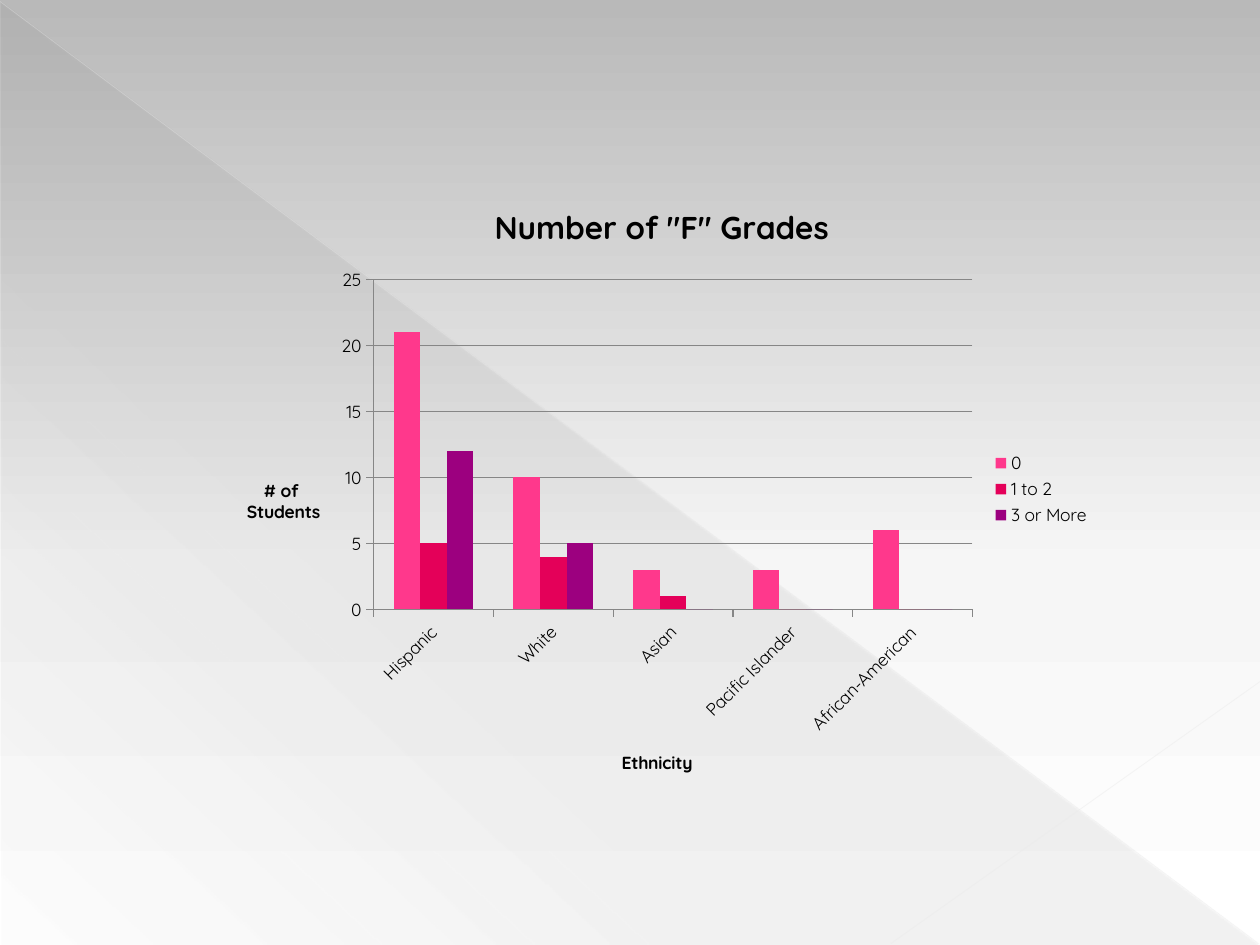
from lxml import etree
from pptx import Presentation
from pptx import util as u
from pptx.chart import data as cd
from pptx.dml.color import RGBColor
from pptx.enum import chart as ch, shapes
from pptx.oxml.ns import qn

BLACK = RGBColor(0, 0, 0)
GREY = RGBColor(0x86, 0x86, 0x86)
MIST = RGBColor(0xE8, 0xE8, 0xE8)
PALE = RGBColor(0xEA, 0xEA, 0xEA)
DUSK = RGBColor(0x66, 0x66, 0x66)
SILVER = RGBColor(0xB9, 0xB9, 0xB9)
SNOW = RGBColor(0xF6, 0xF6, 0xF6)
WHITE = RGBColor(0xFF, 0xFF, 0xFF)
PINK = RGBColor(0xFF, 0x38, 0x8C)
ROSE = RGBColor(0xE4, 0x00, 0x59)
PLUM = RGBColor(0x9C, 0x00, 0x7F)
FACE = "Quicksand"


def shade(fill, root, stops, angle):
    fill.gradient()
    grad = next(root.iter(qn("a:gradFill")))
    grad.find(qn("a:lin")).set("ang", str(angle * 60000))
    group = grad.find(qn("a:gsLst"))
    group.clear()
    for place, tint, alpha in stops:
        stop = etree.SubElement(group, qn("a:gs"), pos=str(place * 1000))
        color = etree.SubElement(stop, qn("a:srgbClr"), val=str(tint))
        etree.SubElement(color, qn("a:alpha"), val=str(alpha * 1000))


def label(frame, lines, size):
    frame.text = "\n".join(lines)
    for para in frame.paragraphs:
        para.font.name = FACE
        para.font.size = u.Pt(size)
        para.font.bold = True
        para.font.color.rgb = BLACK


deck = Presentation()
deck.slide_width, deck.slide_height = u.Cm(25.4), u.Cm(19.05)
slide = deck.slides.add_slide(deck.slide_layouts[6])
shade(slide.background.fill, slide.element,
      [(0, SILVER, 100), (60, SNOW, 100), (100, WHITE, 100)], 90)

wedge = slide.shapes.add_shape(shapes.MSO_SHAPE.RIGHT_TRIANGLE,
                               u.Cm(0.03), u.Cm(0.05), u.Cm(25.35), u.Cm(19))
wedge.shadow.inherit = False
wedge.line.fill.background()
shade(wedge.fill, wedge.element,
      [(0, DUSK, 10), (70, DUSK, 8), (100, DUSK, 1)], 133)

for ends, tint, width, alpha in [
    ((0, 0.03, 25.37, 19.02), MIST, 0.39, 35),
    ((25.4, 13.74, 17.96, 19.02), PALE, 0.47, 45),
]:
    edge = slide.shapes.add_connector(shapes.MSO_CONNECTOR.STRAIGHT, *map(u.Cm, ends))
    edge.line.color.rgb = tint
    edge.line.width = u.Pt(width)
    color = next(edge.element.iter(qn("a:srgbClr")))
    etree.SubElement(color, qn("a:alpha"), val=str(alpha * 1000))
    etree.SubElement(edge.element.spPr, qn("a:effectLst"))

data = cd.CategoryChartData()
data.categories = ["Hispanic", "White", "Asian", "Pacific Islander", "African-American"]
data.add_series("0", [21, 10, 3, 3, 6])
data.add_series("1 to 2", [5, 4, 1, 0, 0])
data.add_series("3 or More", [12, 5, 0, 0, 0])
chart = slide.shapes.add_chart(ch.XL_CHART_TYPE.COLUMN_CLUSTERED, u.Cm(4.45), u.Cm(3.61),
                               u.Cm(17.78), u.Cm(12.5), data).chart
chart.font.name = FACE
chart.font.size = u.Pt(10)
chart.font.color.rgb = BLACK
chart.has_title = True
label(chart.chart_title.text_frame, ['Number of "F" Grades'], 18)
chart.chart_title.include_in_layout = False
chart.has_legend = True
chart.legend.position = ch.XL_LEGEND_POSITION.RIGHT
chart.legend.include_in_layout = False

plot = chart.plots[0]
plot.gap_width = 150
plot.overlap = 0
plot.vary_by_categories = False
for series, tint in zip(plot.series, [PINK, ROSE, PLUM]):
    series.format.fill.solid()
    series.format.fill.fore_color.rgb = tint

base, rise = chart.category_axis, chart.value_axis
for axis, lines in [(base, ["Ethnicity"]), (rise, ["# of ", "Students"])]:
    axis.major_tick_mark = ch.XL_TICK_MARK.OUTSIDE
    axis.minor_tick_mark = ch.XL_TICK_MARK.NONE
    axis.format.line.color.rgb = GREY
    axis.format.line.width = u.Pt(0.75)
    axis.tick_labels.font.size = u.Pt(10)
    frame = axis.axis_title.text_frame
    label(frame, lines, 10)
    body = next(axis.axis_title.element.iter(qn("a:bodyPr")) if hasattr(axis.axis_title, "element")
                else axis.axis_title._element.iter(qn("a:bodyPr")))
    body.set("rot", "0")
    body.set("vert", "horz")
next(base._element.find(qn("c:txPr")).iter(qn("a:bodyPr"))).set("rot", "-2700000")
rise.minimum_scale, rise.maximum_scale, rise.major_unit = 0, 25, 5
rise.has_major_gridlines = True
rise.major_gridlines.format.line.color.rgb = GREY
rise.major_gridlines.format.line.width = u.Pt(0.75)

deck.save("out.pptx")
